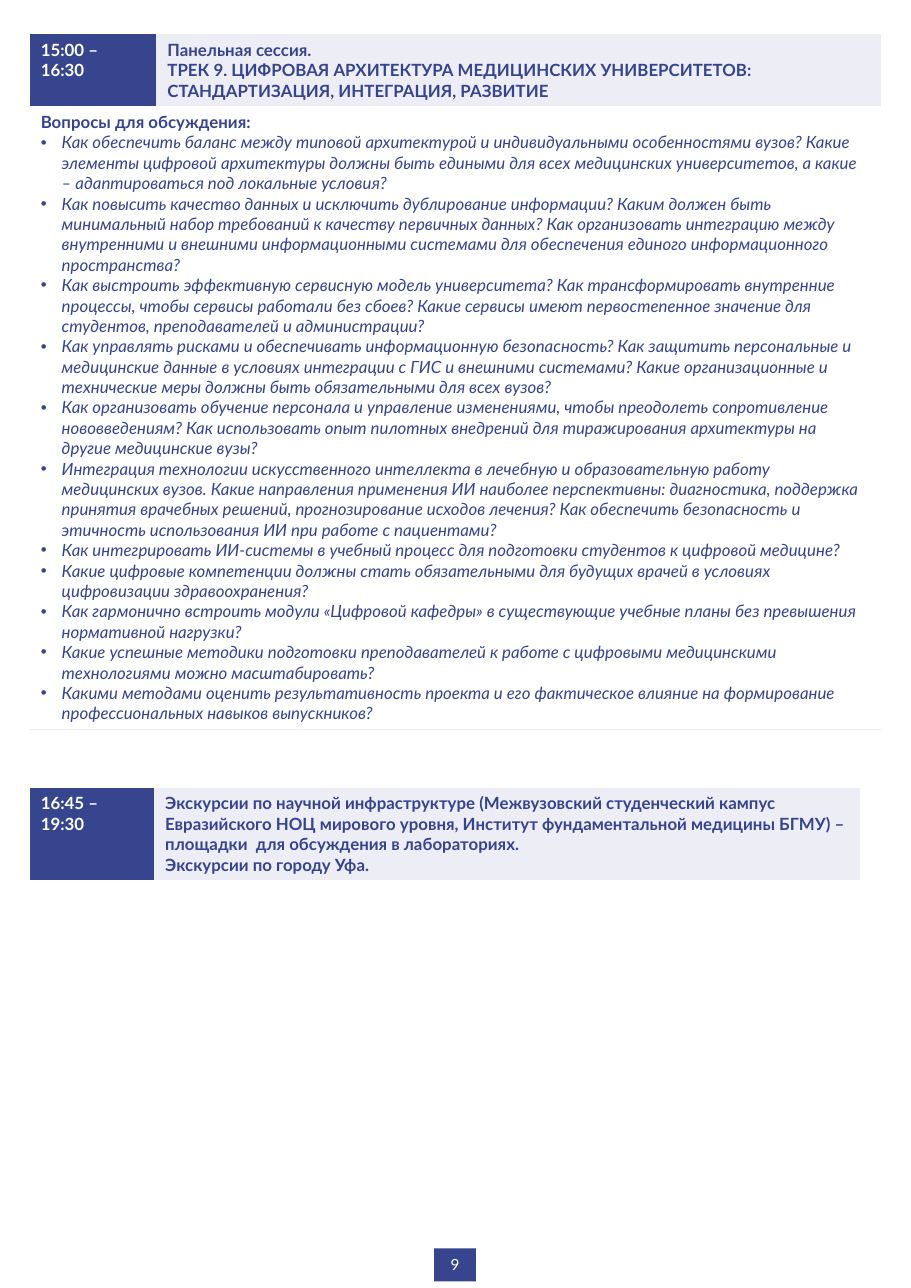
from lxml import etree
from pptx import Presentation
from pptx.dml.color import RGBColor
from pptx.enum import shapes, text
from pptx.oxml import parse_xml
from pptx.oxml.ns import nsdecls, qn
from pptx.util import Inches, Pt

NAVY, INK, PALE, WHITE = "36458E", "354390", "EDEEF5", "FFFFFF"
FONT = "Lato"
LEFT = 0.27
NO_STYLE = "{2D5ABB26-0587-4C30-8999-92F81FD0307C}"

TRACK = ("15:00 – 16:30", [
    "Панельная сессия.",
    "ТРЕК 9. ЦИФРОВАЯ АРХИТЕКТУРА МЕДИЦИНСКИХ УНИВЕРСИТЕТОВ:",
    "СТАНДАРТИЗАЦИЯ, ИНТЕГРАЦИЯ, РАЗВИТИЕ",
])
TOURS = ("16:45 – 19:30", [
    "Экскурсии по научной инфраструктуре (Межвузовский студенческий кампус Евразийского НОЦ мирового уровня, Институт фундаментальной медицины БГМУ) – площадки  для обсуждения в лабораториях.",
    "Экскурсии по городу Уфа.",
])
HEADING = "Вопросы для обсуждения:"
QUESTIONS = [
    "Как обеспечить баланс между типовой архитектурой и индивидуальными особенностями вузов? Какие элементы цифровой архитектуры должны быть едиными для всех медицинских университетов, а какие – адаптироваться под локальные условия?",
    "Как повысить качество данных и исключить дублирование информации? Каким должен быть минимальный набор требований к качеству первичных данных? Как организовать интеграцию между внутренними и внешними информационными системами для обеспечения единого информационного пространства?",
    "Как выстроить эффективную сервисную модель университета? Как трансформировать внутренние процессы, чтобы сервисы работали без сбоев? Какие сервисы имеют первостепенное значение для студентов, преподавателей и администрации?",
    "Как управлять рисками и обеспечивать информационную безопасность? Как защитить персональные и медицинские данные в условиях интеграции с ГИС и внешними системами? Какие организационные и технические меры должны быть обязательными для всех вузов?",
    "Как организовать обучение персонала и управление изменениями, чтобы преодолеть сопротивление нововведениям? Как использовать опыт пилотных внедрений для тиражирования архитектуры на другие медицинские вузы?",
    "Интеграция технологии искусственного интеллекта в лечебную и образовательную работу медицинских вузов. Какие направления применения ИИ наиболее перспективны: диагностика, поддержка принятия врачебных решений, прогнозирование исходов лечения? Как обеспечить безопасность и этичность использования ИИ при работе с пациентами?",
    "Как интегрировать ИИ-системы в учебный процесс для подготовки студентов к цифровой медицине?",
    "Какие цифровые компетенции должны стать обязательными для будущих врачей в условиях цифровизации здравоохранения?",
    "Как гармонично встроить модули «Цифровой кафедры» в существующие учебные планы без превышения нормативной нагрузки?",
    "Какие успешные методики подготовки преподавателей к работе с цифровыми медицинскими технологиями можно масштабировать?",
    "Какими методами оценить результативность проекта и его фактическое влияние на формирование профессиональных навыков выпускников?",
]
PAGE = "9"


def paint(fill, color):
    fill.solid()
    fill.fore_color.rgb = RGBColor.from_string(color)


def write(tf, lines, color=INK, size=11, bold=True, italic=False,
          bullet=False, align=None, append=False):
    for i, line in enumerate(lines):
        p = tf.add_paragraph() if append or i else tf.paragraphs[0]
        p.alignment = align
        if bullet:
            pPr = p._p.get_or_add_pPr()
            pPr.set("marL", str(Inches(0.19)))
            pPr.set("indent", str(-Inches(0.19)))
            etree.SubElement(pPr, qn("a:buFont")).set("typeface", "Arial")
            etree.SubElement(pPr, qn("a:buChar")).set("char", "•")
        r = p.add_run()
        r.text = line
        f = r.font
        f.name, f.size, f.bold, f.italic = FONT, Pt(size), bold, italic
        f.color.rgb = RGBColor.from_string(color)


def add_session(s, session, top, widths, heights):
    time, lines = session
    tbl = s.shapes.add_table(len(heights), 2, Inches(LEFT), Inches(top),
                             Inches(sum(widths)), Inches(sum(heights))).table
    tbl.first_row = tbl.horz_banding = False
    tbl._tbl.tblPr.find(qn("a:tableStyleId")).text = NO_STYLE
    for col, w in zip(tbl.columns, widths):
        col.width = Inches(w)
    for row, h in zip(tbl.rows, heights):
        row.height = Inches(h)
    for cell, color in zip(tbl.rows[0].cells, (NAVY, PALE)):
        paint(cell.fill, color)
    write(tbl.cell(0, 0).text_frame, [time], color=WHITE)
    write(tbl.cell(0, 1).text_frame, lines)
    return tbl


def add_bottom_border(cell, color, width):
    cell._tc.get_or_add_tcPr().insert(0, parse_xml(
        f'<a:lnB {nsdecls("a")} w="{Pt(width)}"><a:solidFill>'
        f'<a:srgbClr val="{color}"/></a:solidFill></a:lnB>'))


prs = Presentation()
prs.slide_width, prs.slide_height = Inches(8.27), Inches(11.69)
s = prs.slides.add_slide(prs.slide_layouts[6])

track = add_session(s, TRACK, 0.31, (1.15, 6.58), (0.65, 5.65))
track.cell(1, 0).merge(track.cell(1, 1))
for cell in track.rows[1].cells:
    paint(cell.fill, WHITE)
    add_bottom_border(cell, PALE, 0.5)
tf = track.cell(1, 0).text_frame
write(tf, [HEADING])
write(tf, QUESTIONS, bold=False, italic=True, bullet=True, append=True)

add_session(s, TOURS, 7.15, (1.13, 6.41), (0.83,))

sp = s.shapes.add_shape(shapes.MSO_SHAPE.RECTANGLE, Inches(3.94), Inches(11.33),
                        Inches(0.38), Inches(0.3))
sp.shadow.inherit = False
paint(sp.fill, NAVY)
sp.line.fill.background()
sp.text_frame.vertical_anchor = text.MSO_ANCHOR.MIDDLE
write(sp.text_frame, [PAGE], color=WHITE, size=10, bold=False,
      align=text.PP_ALIGN.CENTER)

prs.save("out.pptx")
